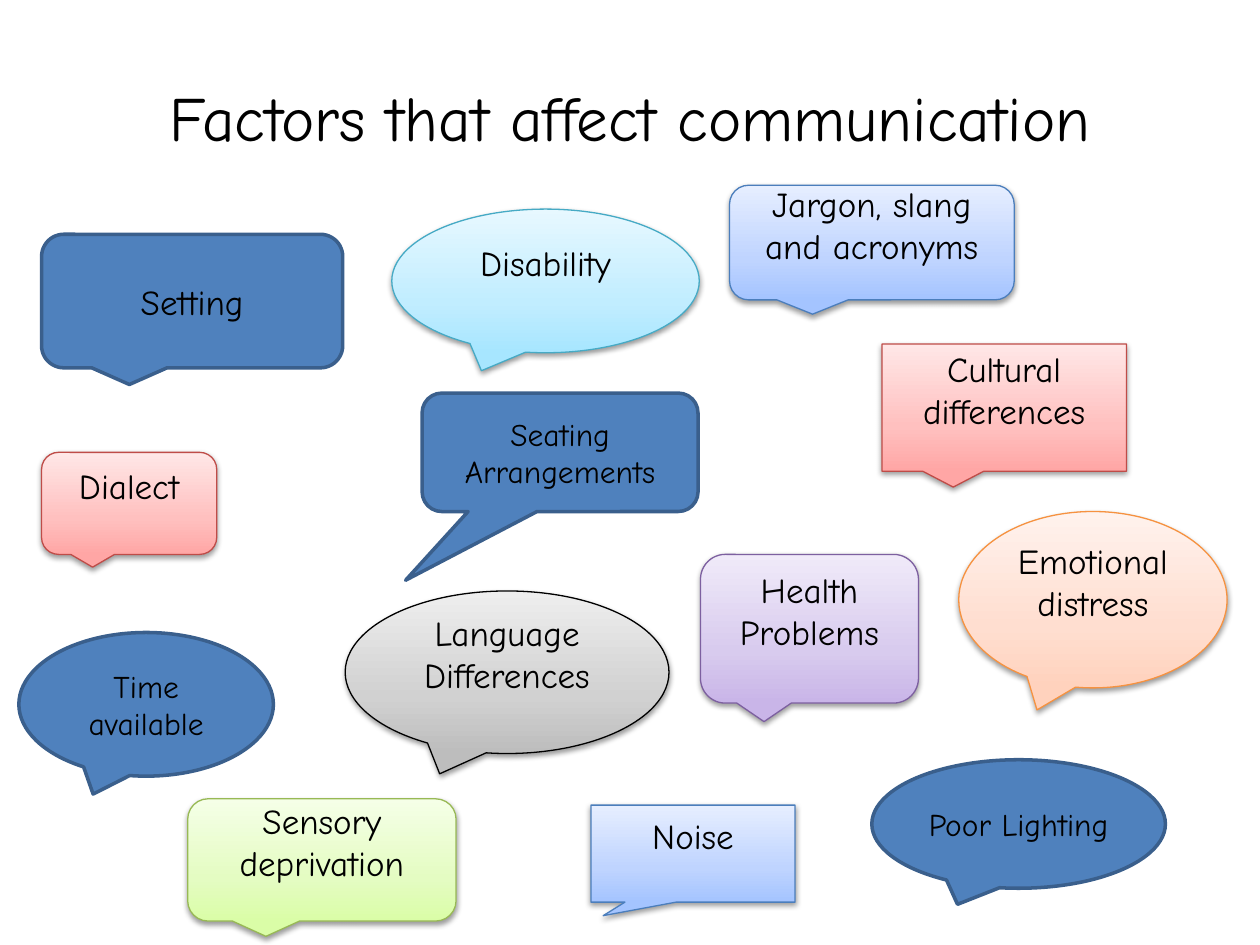
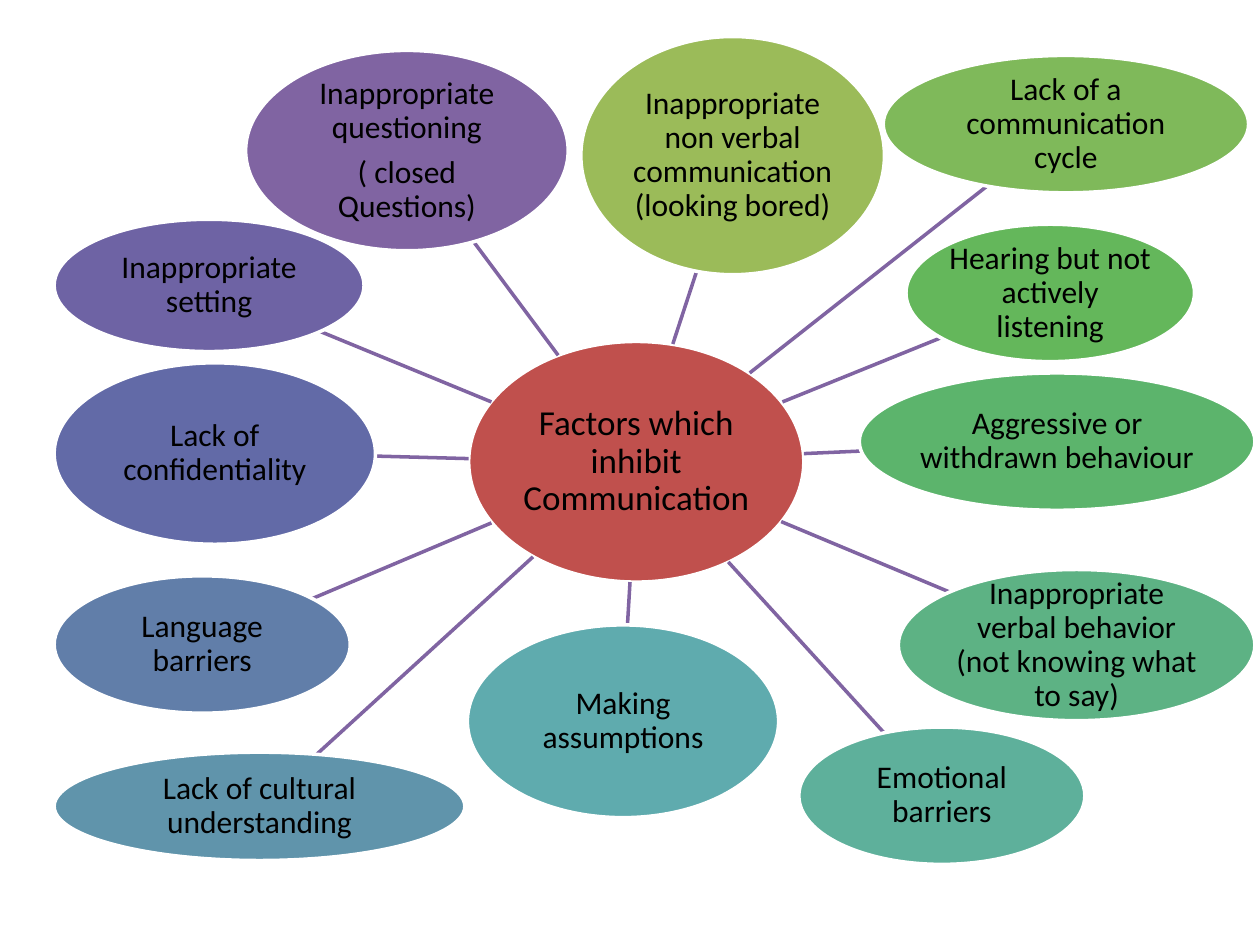
"""Build two slides on the factors that affect and inhibit communication."""
from copy import deepcopy
from math import hypot

from lxml import etree
from pptx import Presentation
from pptx.dml.color import RGBColor
from pptx.enum.shapes import MSO_CONNECTOR, MSO_SHAPE
from pptx.enum.text import MSO_ANCHOR, PP_ALIGN
from pptx.oxml.ns import qn
from pptx.util import Pt

PX = 9144
ROUND = MSO_SHAPE.ROUNDED_RECTANGULAR_CALLOUT
OVAL = MSO_SHAPE.OVAL_CALLOUT
RECT = MSO_SHAPE.RECTANGULAR_CALLOUT
DISC = MSO_SHAPE.OVAL
LINE = MSO_CONNECTOR.STRAIGHT
MID = MSO_ANCHOR.MIDDLE
CENTER = PP_ALIGN.CENTER
COMIC = "Comic Neue"
PLAIN = "Calibri"
INK = "000000"
WHITE = "FFFFFF"
SPOKE = "8064A2"
SOLID = "4F81BD"
RIM = "3A5F8C"

BLUE = ("A4C4FF", "BFD4FF", "E6EEFF", "4B7EBC")
AQUA = ("A7E6FF", "C1EDFF", "E7F8FF", "46AAC5")
GREEN = ("DAFDA7", "E4FCC2", "F5FFE7", "98B955")
MAUVE = ("C9B5E8", "D8CBEE", "F0EAF9", "7D60A0")
GREY = ("BDBDBD", "D1D1D1", "EEEEEE", "000000")
RED = ("FFA6A5", "FFC0BF", "FFE7E7", "BF4C48")
PEACH = ("FFD2BD", "FFDED0", "FFF2ED", "F69240")


def hue(code):
    return RGBColor.from_string(code)


def write(frame, text, size, font):
    frame.word_wrap = True
    frame.vertical_anchor = MID
    frame.text = text
    for para in frame.paragraphs:
        para.alignment = CENTER
        para.font.size = Pt(size)
        para.font.name = font
        para.font.color.rgb = hue(INK)


deck = Presentation()
deck.slide_width = 1000 * PX
deck.slide_height = 750 * PX
blank = deck.slide_layouts[6]

slide = deck.slides.add_slide(blank)
title = slide.shapes.add_textbox(50 * PX, 30 * PX, 900 * PX, 125 * PX)
write(title.text_frame, "Factors that affect communication", 36, COMIC)

shaded = [
    (ROUND, (579, 147, 226, 91), BLUE, "Jargon, slang and acronyms"),
    (OVAL, (311, 166, 244, 114), AQUA, "Disability"),
    (RECT, (469, 639, 162, 77), BLUE, "Noise"),
    (ROUND, (149, 634, 213, 97), GREEN, "Sensory deprivation"),
    (ROUND, (556, 440, 173, 118), MAUVE, "Health Problems"),
    (OVAL, (274, 469, 257, 129), GREY, "Language Differences"),
    (RECT, (700, 273, 194, 101), RED, "Cultural differences"),
    (ROUND, (33, 359, 139, 81), RED, "Dialect"),
    (OVAL, (761, 406, 213, 140), PEACH, "Emotional distress"),
]
tails = {"Noise": (-0.44, 0.64), "Seating Arrangements": (-0.56, 1.08)}

for kind, box, tones, text in shaded:
    call = slide.shapes.add_shape(kind, *(n * PX for n in box))
    call.fill.gradient()
    call.fill.gradient_angle = 90
    props = call._element.spPr
    stops = props.find(".//" + qn("a:gsLst"))
    stops.append(deepcopy(stops[0]))
    for stop, spot, tone in zip(call.fill.gradient_stops, (0, 0.35, 1), tones):
        stop.position = spot
        stop.color.rgb = hue(tone)
    call.line.color.rgb = hue(tones[3])
    call.line.width = Pt(0.75)
    call.shadow.inherit = False
    shade = etree.SubElement(props.find(qn("a:effectLst")), qn("a:outerShdw"),
                             blurRad="40000", dist="20000", dir="5400000",
                             rotWithShape="0")
    tint = etree.SubElement(shade, qn("a:srgbClr"), val=INK)
    etree.SubElement(tint, qn("a:alpha"), val="38000")
    for n, value in enumerate(tails.get(text, ())):
        call.adjustments[n] = value
    write(call.text_frame, text, 20, COMIC)
    call.text_frame.margin_bottom = 34 * PX

flat = [
    (OVAL, (692, 603, 233, 102), "Poor Lighting", 18),
    (ROUND, (335, 312, 219, 94), "Seating Arrangements", 18),
    (OVAL, (15, 502, 202, 114), "Time available", 18),
    (ROUND, (33, 186, 239, 106), "Setting", 20),
]
for kind, box, text, size in flat:
    call = slide.shapes.add_shape(kind, *(n * PX for n in box))
    call.fill.solid()
    call.fill.fore_color.rgb = hue(SOLID)
    call.line.color.rgb = hue(RIM)
    call.line.width = Pt(2)
    call.shadow.inherit = False
    for n, value in enumerate(tails.get(text, ())):
        call.adjustments[n] = value
    write(call.text_frame, text, size, COMIC)

slide = deck.slides.add_slide(blank)
hub = (372, 271, 266, 191)
nodes = [
    (hub, "C0504D", "Factors which inhibit Communication"),
    ((461, 29, 241, 189), "9BBB59",
     "Inappropriate non verbal communication (looking bored)"),
    ((701, 44, 290, 109), "7FB95A", "Lack of a communication cycle"),
    ((719, 178, 229, 109), "64B75B", "Hearing but not actively listening"),
    ((682, 296, 314, 109), "5CB46C", "Aggressive or withdrawn behaviour"),
    ((713, 452, 283, 120), "5DB284",
     "Inappropriate verbal behavior (not knowing what to say)"),
    ((634, 577, 227, 109), "5EB09B", "Emotional barriers"),
    ((371, 496, 247, 153), "5FABAE", "Making assumptions"),
    ((43, 597, 326, 86), "6094AB", "Lack of cultural understanding"),
    ((43, 457, 235, 109), "617EA9", "Language barriers"),
    ((43, 288, 255, 144), "626AA7", "Lack of confidentiality"),
    ((43, 174, 246, 105), "6E63A4", "Inappropriate setting"),
    ((195, 40, 256, 159), "8064A2",
     "Inappropriate questioning\n( closed Questions)"),
]
hubx = hub[0] + hub[2] / 2
huby = hub[1] + hub[3] / 2

for box, tone, text in nodes:
    left, top, wide, high = box
    if box != hub:
        dx = left + wide / 2 - hubx
        dy = top + high / 2 - huby
        near = 0.5 / hypot(dx / hub[2], dy / hub[3])
        far = 1 - 0.5 / hypot(dx / wide, dy / high)
        ends = [round(n) * PX for part in (near, far)
                for n in (hubx + part * dx, huby + part * dy)]
        spoke = slide.shapes.add_connector(LINE, *ends)
        spoke.line.color.rgb = hue(SPOKE)
        spoke.line.width = Pt(2)
        etree.SubElement(spoke._element.spPr, qn("a:effectLst"))
    disc = slide.shapes.add_shape(DISC, *(n * PX for n in box))
    disc.fill.solid()
    disc.fill.fore_color.rgb = hue(tone)
    disc.line.color.rgb = hue(WHITE)
    disc.line.width = Pt(2)
    disc.shadow.inherit = False
    frame = disc.text_frame
    write(frame, text, 20 if box == hub else 18, PLAIN)
    frame.margin_left = frame.margin_right = PX
    frame.margin_top = frame.margin_bottom = PX
    for para in frame.paragraphs:
        para.line_spacing = 0.9
    for para in frame.paragraphs[:-1]:
        para.space_after = Pt(6.3)

deck.save("out.pptx")
